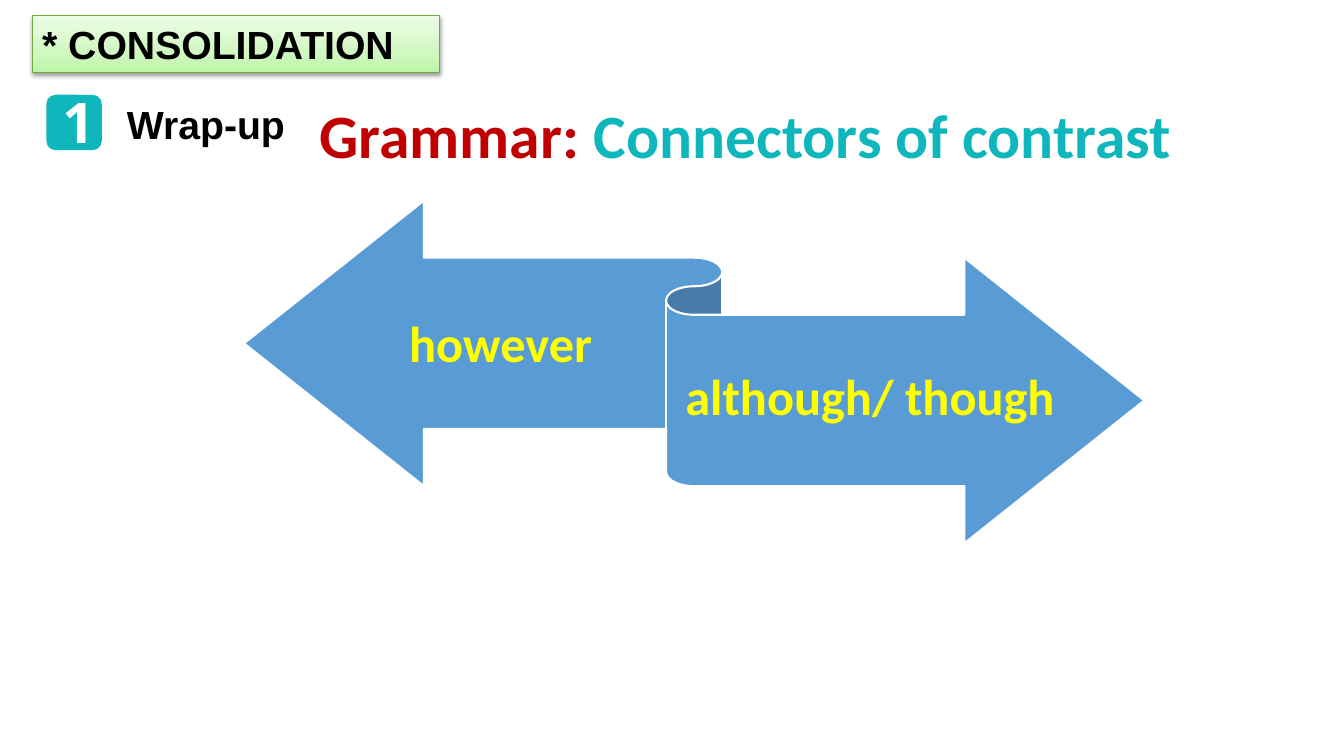
import copy
import pptx
import pptx.util
import pptx.oxml
import pptx.oxml.ns
import pptx.dml.color
import pptx.enum.shapes
import pptx.enum.text

Inches = pptx.util.Inches
Kind = pptx.enum.shapes.MSO_SHAPE
Align = pptx.enum.text.PP_ALIGN
Anchor = pptx.enum.text.MSO_ANCHOR
qn = pptx.oxml.ns.qn

hues = {
    "black": "000000", "white": "FFFFFF", "teal": "0FB7BD", "red": "C00000",
    "yellow": "FFFF00", "blue": "599BD5", "green": "6DAC43",
    "deep": "BEF5A7", "mid": "D1F7C2", "pale": "EDFDE7",
}


def tint(name):
    return pptx.dml.color.RGBColor.from_string(hues[name])


def write(shape, runs, font, size, align=Align.LEFT, space=None, **extra):
    frame = shape.text_frame
    form = {
        "word_wrap": True, "auto_size": pptx.enum.text.MSO_AUTO_SIZE.NONE,
        "vertical_anchor": Anchor.TOP,
        "margin_left": Inches(0.1), "margin_right": Inches(0.1),
        "margin_top": Inches(0.05), "margin_bottom": Inches(0.05),
    }
    for key, value in {**form, **extra}.items():
        setattr(frame, key, value)
    para = frame.paragraphs[0]
    para.alignment = align
    para.line_spacing = space
    for text, hue in runs:
        run = para.add_run()
        run.text = text
        for key, value in {"name": font, "size": pptx.util.Pt(size), "bold": True}.items():
            setattr(run.font, key, value)
        run.font.color.rgb = tint(hue)


deck = pptx.Presentation()
deck.slide_width, deck.slide_height = Inches(13.33), Inches(7.5)
slide = deck.slides.add_slide(deck.slide_layouts[5])
shapes = slide.shapes

wrap = shapes.add_textbox(*map(Inches, (1.16, 0.95, 2.35, 0.57)))
write(wrap, [("Wrap-up", "black")], "Arial", 28)

badge = shapes.add_shape(Kind.ROUNDED_RECTANGLE, *map(Inches, (0.46, 0.94, 0.55, 0.55)))
badge.shadow.inherit = False
badge.fill.solid()
badge.fill.fore_color.rgb = tint("teal")
badge.line.fill.background()

digit = shapes.add_textbox(*map(Inches, (0.52, 0.82, 0.43, 0.77)))
write(digit, [("1", "white")], "Open Sans", 40, Align.CENTER)

banner = shapes.add_shape(Kind.RECTANGLE, *map(Inches, (0.32, 0.15, 4.04, 0.57)))
banner.shadow.inherit = False
banner.line.color.rgb = tint("green")
banner.line.width = pptx.util.Pt(0.75)
banner.fill.gradient()
banner.fill.gradient_angle = 90
first = banner._element.spPr.find(".//" + qn("a:gs"))
first.addnext(copy.deepcopy(first))
for stop, (place, hue) in zip(banner.fill.gradient_stops, [(0, "deep"), (0.35, "mid"), (1, "pale")]):
    stop.position = place
    stop.color.rgb = tint(hue)
banner._element.spPr.find(qn("a:effectLst")).append(pptx.oxml.parse_xml(
    f'<a:outerShdw {pptx.oxml.ns.nsdecls("a")} blurRad="39370" dist="20320" dir="5400000" rotWithShape="0">'
    f'<a:srgbClr val="{hues["black"]}"><a:alpha val="38000"/></a:srgbClr></a:outerShdw>'))
write(banner, [("* CONSOLIDATION", "black")], "Arial", 28)

title = shapes.title
for key, value in {"left": 3.07, "top": 0.91, "width": 8.83, "height": 0.84}.items():
    setattr(title, key, Inches(value))
write(title, [("Grammar:", "red"), (" Connectors of contrast", "teal")], "Calibri", 44)

ribbon = shapes.add_shape(Kind.LEFT_RIGHT_RIBBON, *map(Inches, (2.42, 1.99, 8.93, 3.4)))
ribbon.adjustments[1] = 0.525
ribbon.shadow.inherit = False
ribbon.fill.solid()
ribbon.fill.fore_color.rgb = tint("blue")
ribbon.line.color.rgb = tint("white")
ribbon.line.width = pptx.util.Pt(1.5)

for word, place in [("however", (2.04, 2.6, 5.85, 1.67)),
                    ("although/ though", (6.34, 3.13, 4.58, 1.67))]:
    label = shapes.add_textbox(*map(Inches, place))
    write(label, [(word, "yellow")], "Calibri", 36, Align.CENTER, 0.9,
          vertical_anchor=Anchor.MIDDLE, margin_left=0, margin_right=0,
          margin_top=Inches(0.14), margin_bottom=Inches(0.15))

deck.save("out.pptx")
